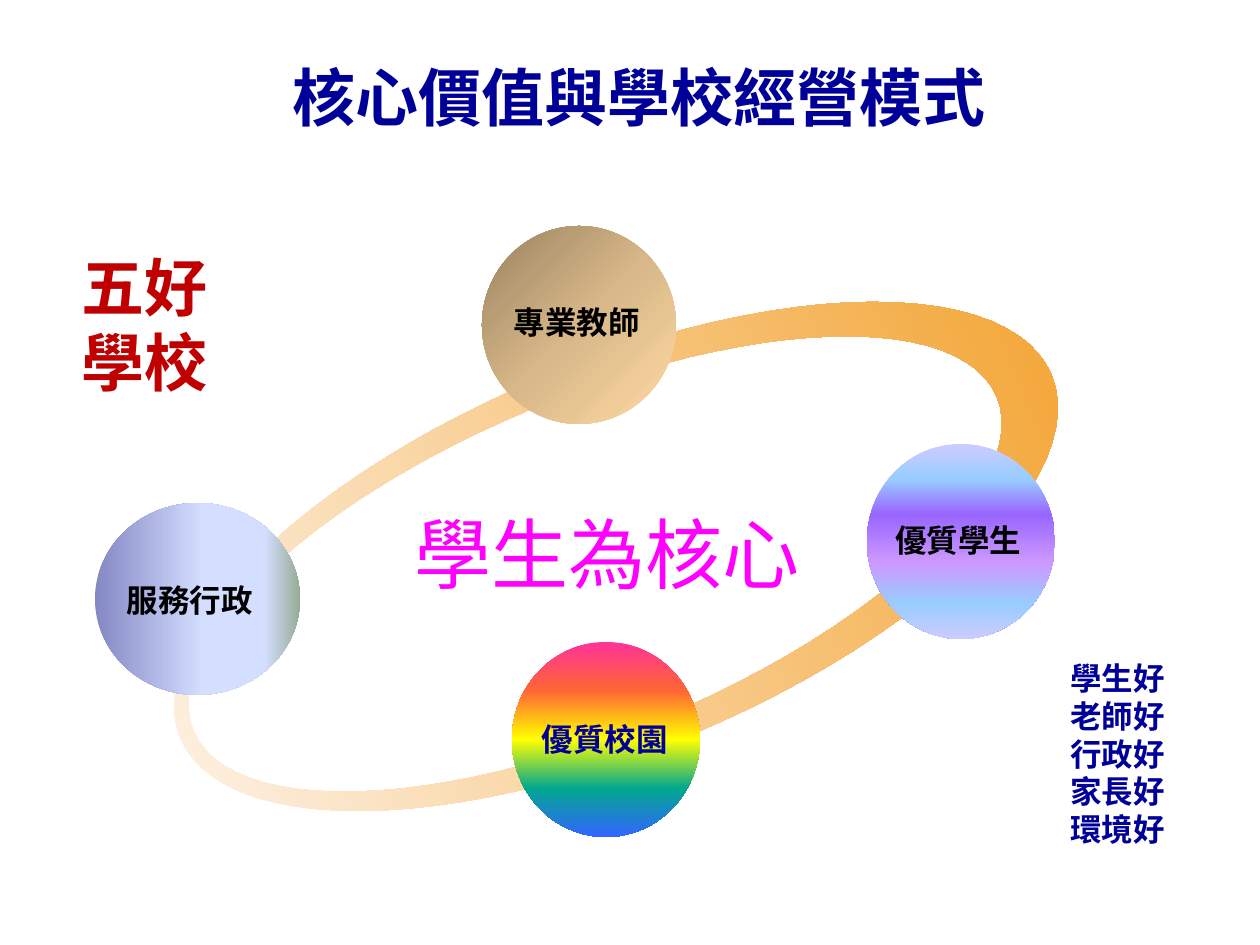
from dataclasses import dataclass
from math import cos, sin, tau

from lxml.etree import SubElement
from pptx import Presentation
from pptx.dml.color import RGBColor
from pptx.enum.shapes import MSO_SHAPE as Shape
from pptx.enum.text import MSO_ANCHOR as Anchor, PP_ALIGN as Align
from pptx.oxml.ns import qn
from pptx.util import Emu, Pt

PX = 914400 // 126


@dataclass(frozen=True)
class Theme:
    """Colours, fonts and type sizes of the deck."""
    navy: str = "000099"
    red: str = "C00000"
    pink: str = "FF00FF"
    black: str = "000000"
    font: str = "Noto Sans CJK SC"
    list_font: str = "Arial"
    title: int = 36
    centre: int = 44
    label: int = 18
    ring: tuple = ((0, "FEF8F4"), (100, "F29F26"))
    teacher: tuple = ((0, "988160"), (50, "D8B889"), (100, "FFDAA3"))
    service: tuple = ((0, "8488C4"), (53, "D4DEFF"), (83, "D4DEFF"), (100, "96AB94"))
    student: tuple = ((0, "CCCCFF"), (18, "99CCFF"), (36, "9966FF"),
                      (61, "CC99FF"), (82, "99CCFF"), (100, "CCCCFF"))
    campus: tuple = ((0, "FF3399"), (25, "FF6633"), (50, "FFFF00"),
                     (75, "01A78F"), (100, "3366FF"))


THEME = Theme()


def px(*lengths):
    """Turn pixel lengths into EMU."""
    return [Emu(round(length * PX)) for length in lengths]


def paint(shape, stops, angle=None):
    """Fill a shape with a linear gradient, or a corner radial one without an angle."""
    shape.shadow.inherit = False
    shape.line.fill.background()
    shape.fill.gradient()
    gradient = shape._element.spPr.find(qn("a:gradFill"))
    for child in list(gradient):
        gradient.remove(child)
    gradient.set("rotWithShape", "1")
    stop_list = SubElement(gradient, qn("a:gsLst"))
    for position, colour in stops:
        stop = SubElement(stop_list, qn("a:gs"), pos=str(position * 1000))
        SubElement(stop, qn("a:srgbClr"), val=colour)
    if angle is None:
        path = SubElement(gradient, qn("a:path"), path="circle")
        SubElement(path, qn("a:fillToRect"), r="100000", b="100000")
    else:
        SubElement(gradient, qn("a:lin"), ang=str(angle * 60000), scaled="0")


def add_text(page, box, lines, size, colour, bold=True, align=Align.LEFT,
             font=THEME.font, anchor=Anchor.TOP, inset=13):
    """Place one paragraph per line inside the box."""
    frame = page.shapes.add_textbox(*px(*box)).text_frame
    frame.word_wrap = True
    frame.vertical_anchor = anchor
    frame.margin_left = px(inset)[0]
    frame.margin_right = px(12)[0]
    frame.margin_top = px(6)[0] + Pt(size * 0.1)
    frame.text = "\n".join(lines)
    for para in frame.paragraphs:
        para.alignment = align
        para.line_spacing = Pt(size * 1.2)
        for span in para.runs:
            span.font.name = font
            span.font.size = Pt(size)
            span.font.bold = bold
            span.font.color.rgb = RGBColor.from_string(colour)
            SubElement(span.font._element, qn("a:ea"), typeface=THEME.font)


def oval_points(centre, radii, direction, steps=96):
    """List the points around an ellipse."""
    (x, y), (across, down) = centre, radii
    angles = [direction * tau * step / steps for step in range(steps)]
    return [(round((x + across * cos(turn)) * PX), round((y + down * sin(turn)) * PX))
            for turn in angles]


def add_ring(page, box):
    """Draw the tilted ring, thinner on its left, within the box."""
    left, top, width, height = box
    x, y = left + width / 2, top + height / 2
    outer = oval_points((x, y), (width / 2, height / 2), 1)
    inner = oval_points((x - 22, y - 1), (width / 2 - 37, height / 2 - 26), -1)
    builder = page.shapes.build_freeform(*outer[0], scale=1.0)
    builder.add_line_segments(outer[1:], close=True)
    builder.move_to(*inner[0])
    builder.add_line_segments(inner[1:], close=True)
    ring = builder.convert_to_shape()
    ring.rotation = 337.4
    paint(ring, THEME.ring, 0)


def add_value(page, box, stops, angle, text, label, colour=THEME.black, align=Align.CENTER):
    """Draw one core value as a circle, with its label box relative to the circle."""
    left, top, width, height = box
    paint(page.shapes.add_shape(Shape.OVAL, *px(*box)), stops, angle)
    shift_x, shift_y, label_width = label
    add_text(page, (left + shift_x, top + shift_y, label_width, 50), [text],
             THEME.label, colour, align=align)


def add_model(page, box):
    """Draw the ring, its centre text and the four values, relative to the box."""
    left, top, width, height = box
    add_text(page, (left + 307, top + 267, 493, 105), ["學生為核心"],
             THEME.centre, THEME.pink, bold=False)
    add_ring(page, (left + 49, top + 137, 944, 387))
    add_value(page, (left + 387, top, 194, 198), THEME.teacher, None,
              "專業教師", (19, 68, 151), align=Align.LEFT)
    add_value(page, (left, top + 277, 205, 192), THEME.service, 0,
              "服務行政", (19, 69, 178), align=Align.LEFT)
    add_value(page, (left + 772, top + 218, 188, 195), THEME.student, 90,
              "優質學生", (7, 68, 168))
    add_value(page, (left + 417, top + 416, 188, 195), THEME.campus, 90,
              "優質校園", (8, 69, 168), THEME.navy)


def build_values_slide(deck):
    """Build the slide on core values and the school model."""
    page = deck.slides.add_slide(deck.slide_layouts[6])
    add_text(page, (253, 35, 861, 116), ["核心價值與學校經營模式"],
             THEME.title, THEME.navy, anchor=Anchor.MIDDLE, inset=40)
    add_model(page, (95, 226, 993, 611))
    add_text(page, (69, 236, 178, 165), ["五好學校"], THEME.title, THEME.red)
    add_text(page, (1033, 650, 168, 204),
             [who + "好" for who in ("學生", "老師", "行政", "家長", "環境")],
             THEME.label, THEME.navy, align=Align.CENTER, font=THEME.list_font)


def main():
    """Create and save the deck."""
    deck = Presentation()
    deck.slide_width, deck.slide_height = px(1260, 945)
    build_values_slide(deck)
    deck.save("out.pptx")


if __name__ == "__main__":
    main()
